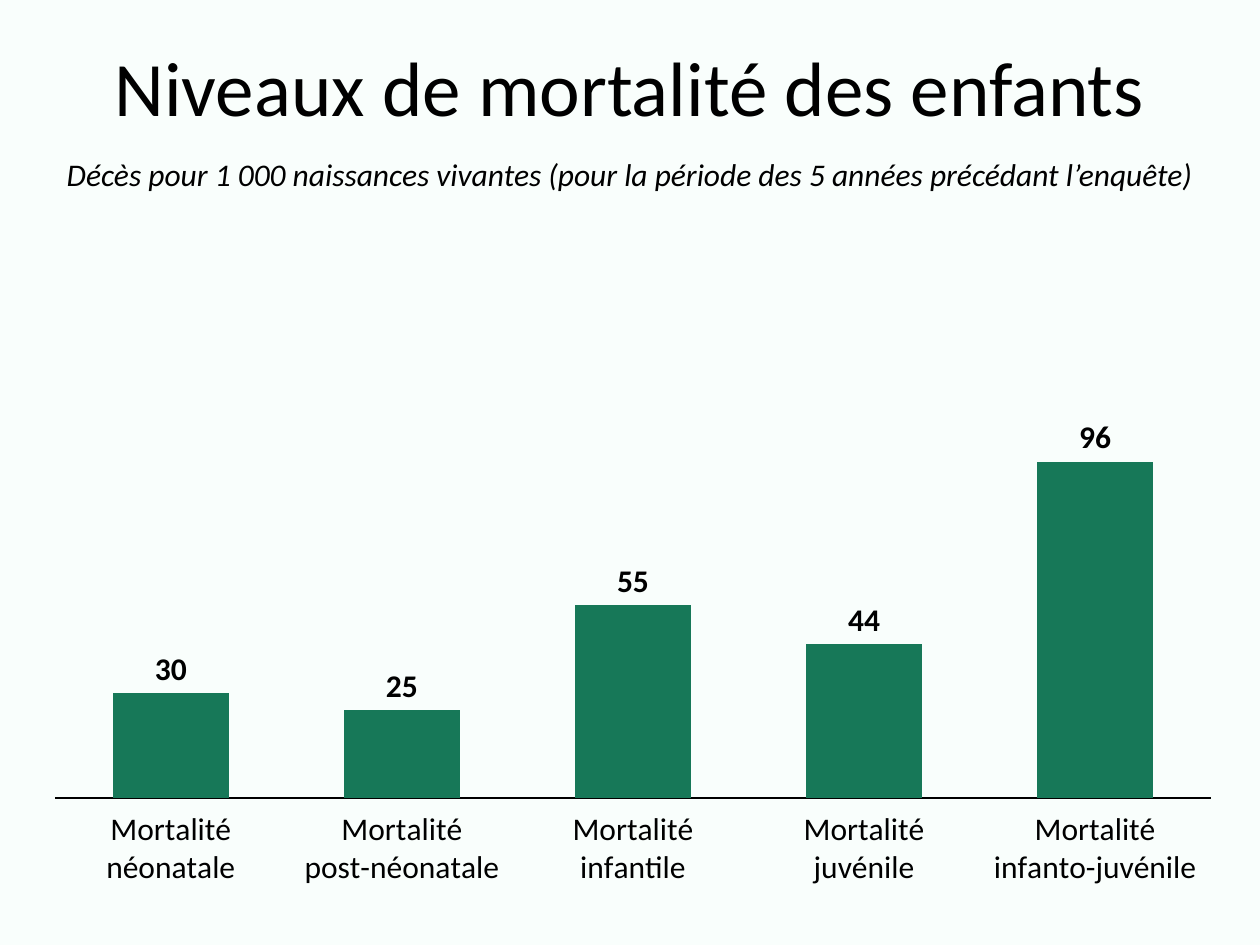
from lxml.etree import SubElement
from pptx import Presentation
from pptx.chart.data import CategoryChartData
from pptx.dml.color import RGBColor
from pptx.enum.chart import XL_CHART_TYPE as ChartType
from pptx.enum.chart import XL_LABEL_POSITION as LabelPosition
from pptx.enum.chart import XL_TICK_LABEL_POSITION as TickLabelPosition
from pptx.enum.chart import XL_TICK_MARK as TickMark
from pptx.enum.text import MSO_ANCHOR as Anchor
from pptx.enum.text import PP_ALIGN as Align
from pptx.oxml.ns import qn
from pptx.util import Pt

# Content
TITLE = "Niveaux de mortalité des enfants"
SUBTITLE = ("Décès pour 1 000 naissances vivantes "
            "(pour la période des 5 années précédant l’enquête)")
RATES = [
    ("Mortalité\nnéonatale", 30),
    ("Mortalité\npost-néonatale", 25),
    ("Mortalité\ninfantile", 55),
    ("Mortalité\njuvénile", 44),
    ("Mortalité\ninfanto-juvénile", 96),
]

# Style and geometry (px)
COLORS = {"background": "F9FEFC", "text": "000000", "bar": "177858"}
FONT = "Calibri"
WIDTH, HEIGHT = 1260, 945
TITLE_BOX = (0, 0, WIDTH, 183)
SUBTITLE_BOX = (0, 149, WIDTH, 50)
CHART_BOX = (35, 222, 1196, 723)
PLOT = {"x": 0.017, "y": 0.07, "w": 0.966, "h": 0.727}  # shares of the chart


def px(length):
    return round(length * 914400 / 126)


def box(lengths):
    return [px(length) for length in lengths]


def color(name):
    return RGBColor.from_string(COLORS[name])


def format_font(font, size, bold=False, italic=False):
    font.name, font.size = FONT, Pt(size)
    font.bold, font.italic = bold, italic
    font.color.rgb = color("text")


def write_text(shape, text, size, italic=False, anchor=Anchor.TOP, spacing=None):
    frame = shape.text_frame
    frame.word_wrap = True
    frame.vertical_anchor = anchor
    paragraph = frame.paragraphs[0]
    paragraph.alignment = Align.CENTER
    paragraph.line_spacing = spacing
    run = paragraph.add_run()
    run.text = text
    format_font(run.font, size, italic=italic)


def set_inner_plot(chart, shares):
    plot_area = chart.element.find(".//" + qn("c:plotArea"))
    layout = plot_area.find(qn("c:layout"))
    if layout is None:
        layout = SubElement(plot_area, qn("c:layout"))
        plot_area.insert(0, layout)
    manual = SubElement(layout, qn("c:manualLayout"))
    settings = [("layoutTarget", "inner"), ("xMode", "edge"), ("yMode", "edge")]
    for tag, value in settings + list(shares.items()):
        SubElement(manual, qn("c:" + tag)).set("val", str(value))


def add_rate_chart(slide):
    data = CategoryChartData()
    data.categories = [label for label, _ in RATES]
    data.add_series("Series 1", [rate for _, rate in RATES])
    chart = slide.shapes.add_chart(
        ChartType.COLUMN_CLUSTERED, *box(CHART_BOX), data).chart
    chart.has_legend = chart.has_title = False
    format_font(chart.font, 10)
    set_inner_plot(chart, PLOT)

    # Axes
    category_axis, value_axis = chart.category_axis, chart.value_axis
    category_axis.major_tick_mark = TickMark.NONE
    category_axis.tick_label_position = TickLabelPosition.LOW
    category_axis.format.line.color.rgb = color("text")
    category_axis.format.line.width = Pt(0.75)
    format_font(category_axis.tick_labels.font, 18)
    value_axis.minimum_scale, value_axis.maximum_scale = 0, 150
    value_axis.has_major_gridlines = False
    value_axis.visible = False

    # Bars and value labels
    plot = chart.plots[0]
    plot.gap_width = 100
    plot.vary_by_categories = False
    series = plot.series[0]
    series.format.fill.solid()
    series.format.fill.fore_color.rgb = color("bar")
    labels = series.data_labels
    labels.show_value = True
    labels.position = LabelPosition.OUTSIDE_END
    format_font(labels.font, 18, bold=True)


def main():
    presentation = Presentation()
    presentation.slide_width, presentation.slide_height = px(WIDTH), px(HEIGHT)
    slide = presentation.slides.add_slide(presentation.slide_layouts[5])
    fill = slide.background.fill
    fill.solid()
    fill.fore_color.rgb = color("background")

    # Title
    title = slide.shapes.title
    title.left, title.top, title.width, title.height = box(TITLE_BOX)
    write_text(title, TITLE, 44, anchor=Anchor.MIDDLE, spacing=0.9)

    # Chart and subtitle
    add_rate_chart(slide)
    subtitle = slide.shapes.add_textbox(*box(SUBTITLE_BOX))
    write_text(subtitle, SUBTITLE, 18, italic=True)

    presentation.save("out.pptx")


if __name__ == "__main__":
    main()
